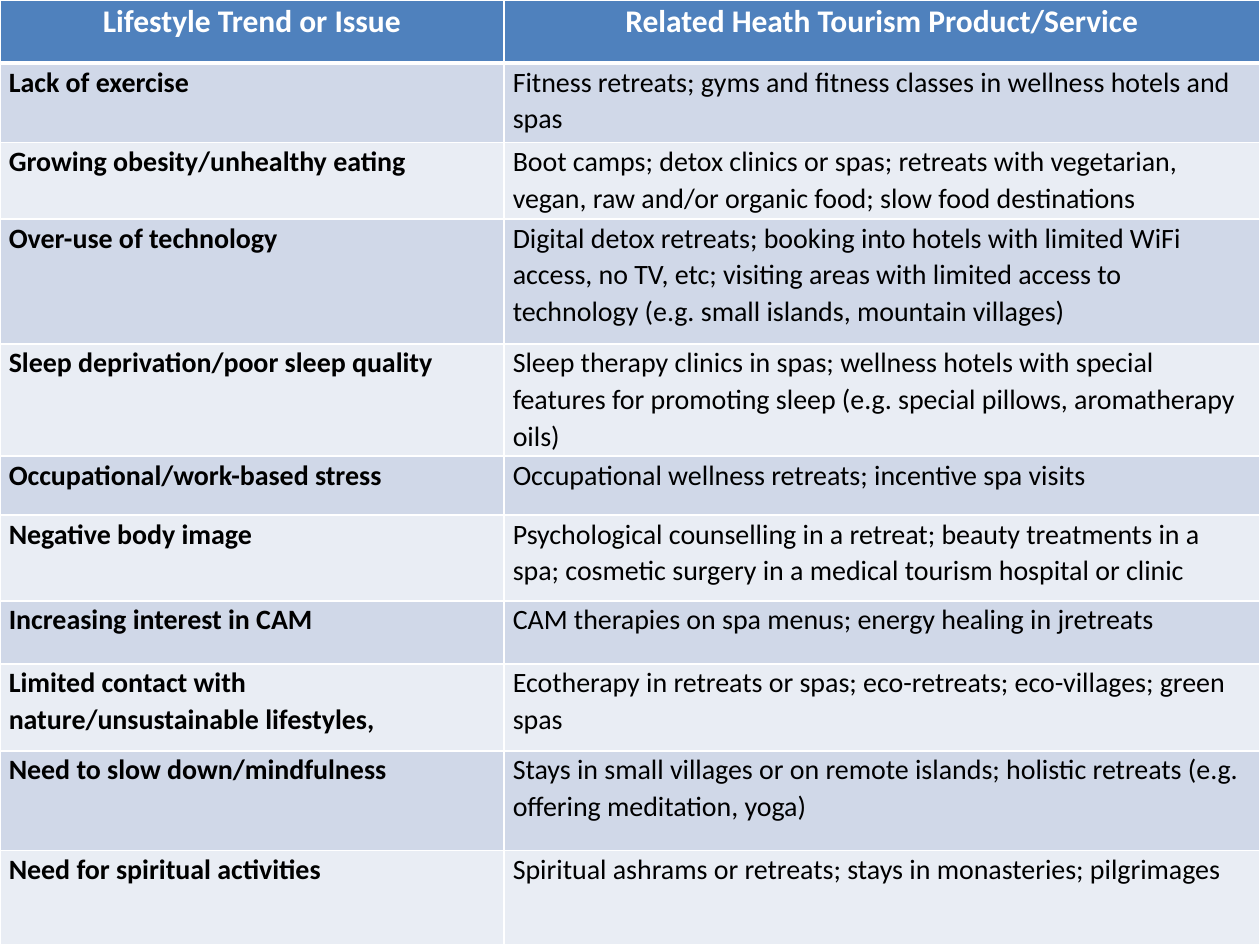
from dataclasses import dataclass

from pptx import Presentation
from pptx.dml.color import RGBColor as RGB
from pptx.enum.text import PP_ALIGN as Align
from pptx.oxml import parse_xml
from pptx.oxml.ns import nsdecls
from pptx.util import Inches, Pt


@dataclass(frozen=True)
class Theme:
    font: str = "Calibri"
    header_size: int = 18
    body_size: int = 16
    header_fill: str = "4F81BD"
    header_text: str = "FFFFFF"
    body_text: str = "000000"
    bands: tuple = ("D0D8E8", "E9EDF4")
    rule: str = "FFFFFF"
    line_spacing: float = 1.07


THEME = Theme()
COLUMN_WIDTHS = (4, 6)
HEADINGS = ("Lifestyle Trend or Issue", "Related Heath Tourism Product/Service")
HEADING_HEIGHT = 0.5

# Row height, lifestyle trend, related product or service
TRENDS = (
    (0.63, "Lack of exercise",
     "Fitness retreats; gyms and fitness classes in wellness hotels and spas"),
    (0.61, "Growing obesity/unhealthy eating",
     "Boot camps; detox clinics or spas; retreats with vegetarian, vegan, raw "
     "and/or organic food; slow food destinations"),
    (0.99, "Over-use of technology",
     "Digital detox retreats; booking into hotels with limited WiFi access, no TV, "
     "etc; visiting areas with limited access to technology (e.g. small islands, "
     "mountain villages)"),
    (0.89, "Sleep deprivation/poor sleep quality",
     "Sleep therapy clinics in spas; wellness hotels with special features for "
     "promoting sleep (e.g. special pillows, aromatherapy oils)"),
    (0.47, "Occupational/work-based stress",
     "Occupational wellness retreats; incentive spa visits"),
    (0.68, "Negative body image",
     "Psychological counselling in a retreat; beauty treatments in a spa; cosmetic "
     "surgery in a medical tourism hospital or clinic"),
    (0.5, "Increasing interest in CAM",
     "CAM therapies on spa menus; energy healing in jretreats"),
    (0.69, "Limited contact with nature/unsustainable lifestyles,",
     "Ecotherapy in retreats or spas; eco-retreats; eco-villages; green spas"),
    (0.79, "Need to slow down/mindfulness",
     "Stays in small villages or on remote islands; holistic retreats (e.g. "
     "offering meditation, yoga)"),
    (0.75, "Need for spiritual activities",
     "Spiritual ashrams or retreats; stays in monasteries; pilgrimages"),
)


def set_attributes(target, values):
    for name, value in values.items():
        setattr(target, name, value)


def add_borders(cell, widths):
    """Rule the sides of a cell; these elements must precede its fill."""
    properties = cell._tc.get_or_add_tcPr()
    for position, (side, width) in enumerate(widths.items()):
        properties.insert(position, parse_xml(
            f'<a:{side} {nsdecls("a")} w="{Pt(width)}"><a:solidFill>'
            f'<a:srgbClr val="{THEME.rule}"/></a:solidFill></a:{side}>'))


def fill_cell(cell, text, fill, color, size, bold, align, top=1, bottom=1):
    set_attributes(cell, {
        "margin_left": Inches(0.07), "margin_right": Inches(0.07),
        "margin_top": 0, "margin_bottom": 0,
    })
    cell.fill.solid()
    cell.fill.fore_color.rgb = RGB.from_string(fill)
    add_borders(cell, {"lnL": 1, "lnR": 1, "lnT": top, "lnB": bottom})

    paragraph = cell.text_frame.paragraphs[0]
    set_attributes(paragraph, {"alignment": align, "line_spacing": THEME.line_spacing})
    wording = paragraph.add_run()
    wording.text = text
    set_attributes(wording.font, {"name": THEME.font, "size": Pt(size), "bold": bold})
    wording.font.color.rgb = RGB.from_string(color)


def add_trend_table(slide, width, height):
    table = slide.shapes.add_table(
        len(TRENDS) + 1, len(COLUMN_WIDTHS), 0, 0, width, height).table
    for column, inches in zip(table.columns, COLUMN_WIDTHS):
        column.width = Inches(inches)
    heights = [HEADING_HEIGHT] + [trend[0] for trend in TRENDS]
    for row, inches in zip(table.rows, heights):
        row.height = Inches(inches)

    # Headings, with a heavier rule beneath
    for column, heading in enumerate(HEADINGS):
        fill_cell(table.cell(0, column), heading, THEME.header_fill,
                  THEME.header_text, THEME.header_size, True, Align.CENTER, bottom=3)

    # Banded rows, with the trend in bold
    for index, (_, *entries) in enumerate(TRENDS):
        band = THEME.bands[index % len(THEME.bands)]
        for column, entry in enumerate(entries):
            fill_cell(table.cell(index + 1, column), entry, band, THEME.body_text,
                      THEME.body_size, column == 0, Align.LEFT,
                      top=3 if index == 0 else 1)


def main():
    deck = Presentation()
    set_attributes(deck, {"slide_width": Inches(10), "slide_height": Inches(7.5)})
    slide = deck.slides.add_slide(deck.slide_layouts[6])
    add_trend_table(slide, deck.slide_width, deck.slide_height)
    deck.save("out.pptx")


if __name__ == "__main__":
    main()
